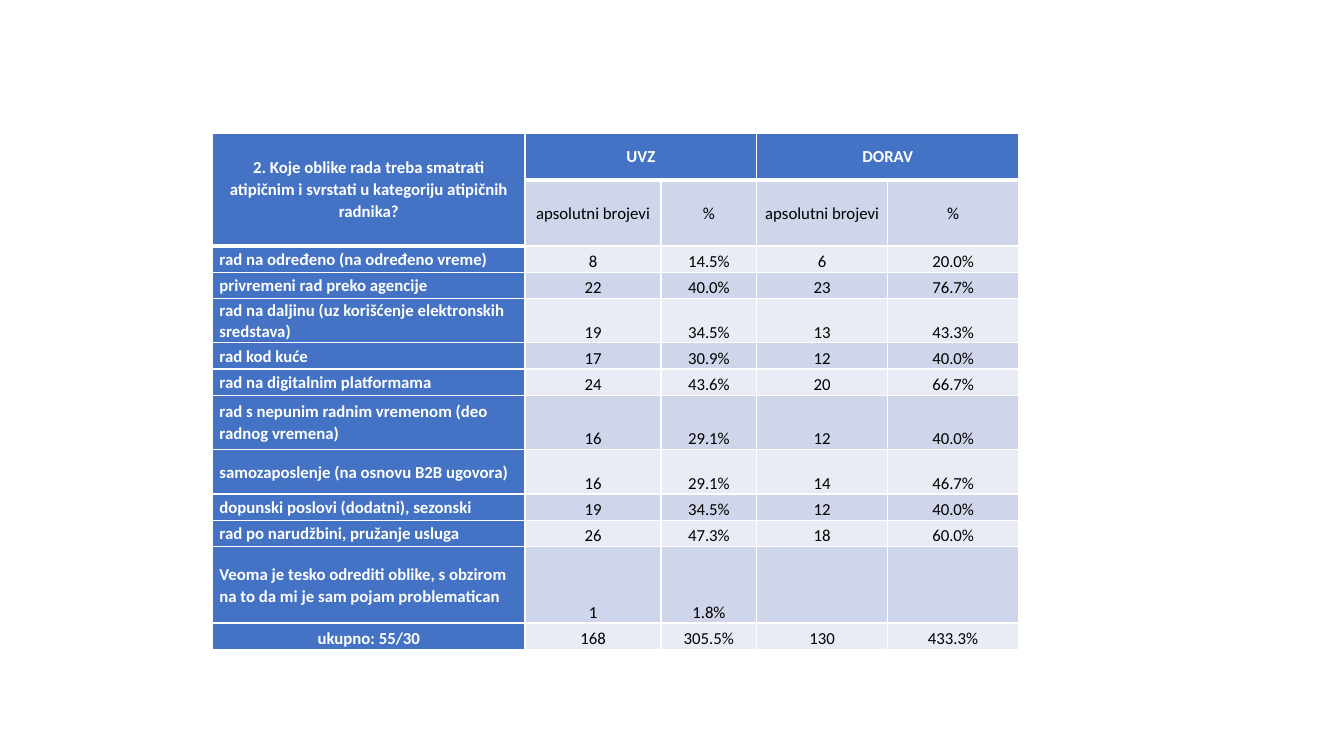
from lxml.etree import SubElement
from pptx import Presentation
from pptx.dml.color import RGBColor
from pptx.enum.text import MSO_ANCHOR, PP_ALIGN
from pptx.oxml.ns import qn
from pptx.util import Cm, Pt

WHITE = RGBColor(0xFF, 0xFF, 0xFF)
BLACK = RGBColor(0x00, 0x00, 0x00)
BLUE = RGBColor(0x44, 0x72, 0xC4)
BAND_DARK = RGBColor(0xCF, 0xD5, 0xEA)
BAND_LIGHT = RGBColor(0xE9, 0xEB, 0xF5)

QUESTION = ("2. Koje oblike rada treba smatrati atipičnim i svrstati "
            "u kategoriju atipičnih radnika?")
GROUPS = ["UVZ", "DORAV"]
MEASURES = ["apsolutni brojevi", "%"]
TOTAL_LABEL = "ukupno: 55/30"

COLUMN_WIDTHS = [7.87, 3.43, 2.41, 3.3, 3.3]
HEADER_HEIGHTS = [1.19, 0.97]

# Row height, form of work, then count and share for each group
ANSWERS = [
    (0.66, "rad na određeno (na određeno vreme)", "8", "14.5%", "6", "20.0%"),
    (0.66, "privremeni rad preko agencije", "22", "40.0%", "23", "76.7%"),
    (1.12, "rad na daljinu (uz korišćenje elektronskih sredstava)",
     "19", "34.5%", "13", "43.3%"),
    (0.66, "rad kod kuće", "17", "30.9%", "12", "40.0%"),
    (0.66, "rad na digitalnim platformama", "24", "43.6%", "20", "66.7%"),
    (1.37, "rad s nepunim radnim vremenom (deo radnog vremena)",
     "16", "29.1%", "12", "40.0%"),
    (1.12, "samozaposlenje (na osnovu B2B ugovora)", "16", "29.1%", "14", "46.7%"),
    (0.66, "dopunski poslovi (dodatni), sezonski", "19", "34.5%", "12", "40.0%"),
    (0.66, "rad po narudžbini, pružanje usluga", "26", "47.3%", "18", "60.0%"),
    (1.93, "Veoma je tesko odrediti oblike, s obzirom na to da mi je sam pojam "
           "problematican", "1", "1.8%", "", ""),
    (0.66, TOTAL_LABEL, "168", "305.5%", "130", "433.3%"),
]


def set_borders(cell, bottom=1):
    properties = cell._tc.get_or_add_tcPr()
    for side, width in (("L", 1), ("R", 1), ("T", 1), ("B", bottom)):
        line = SubElement(properties, qn(f"a:ln{side}"), w=str(Pt(width)))
        color = SubElement(SubElement(line, qn("a:solidFill")), qn("a:srgbClr"))
        color.set("val", str(WHITE))


def style_cell(cell, fill, bottom=1):
    set_borders(cell, bottom)
    cell.fill.solid()
    cell.fill.fore_color.rgb = fill


def write_text(cell, text, color=BLACK, bold=False,
               align=PP_ALIGN.CENTER, anchor=MSO_ANCHOR.MIDDLE):
    cell.margin_left = cell.margin_right = Cm(0.17)
    cell.margin_top = cell.margin_bottom = 0
    cell.vertical_anchor = anchor
    paragraph = cell.text_frame.paragraphs[0]
    paragraph.alignment = align
    paragraph.line_spacing = 1.07
    paragraph.font.size = Pt(12)
    if text:
        run = paragraph.add_run()
        run.text = text
        run.font.name = "Calibri"
        run.font.size = Pt(12)
        run.font.bold = bold
        run.font.color.rgb = color


def add_header(table):
    for column in range(len(COLUMN_WIDTHS)):
        style_cell(table.cell(0, column), BLUE, bottom=3)
    style_cell(table.cell(1, 0), BLUE, bottom=3)

    # Question spans both header rows
    table.cell(0, 0).merge(table.cell(1, 0))
    write_text(table.cell(0, 0), QUESTION, color=WHITE, bold=True)

    # Each group spans its two measures
    for index, group in enumerate(GROUPS):
        first = 1 + index * len(MEASURES)
        table.cell(0, first).merge(table.cell(0, first + 1))
        write_text(table.cell(0, first), group, color=WHITE, bold=True)
        for column, measure in enumerate(MEASURES, first):
            style_cell(table.cell(1, column), BAND_DARK)
            write_text(table.cell(1, column), measure)


def add_answer(table, row, label, values):
    is_total = label == TOTAL_LABEL
    label_cell = table.cell(row, 0)
    style_cell(label_cell, BLUE)
    write_text(label_cell, label, color=WHITE, bold=True,
               align=PP_ALIGN.CENTER if is_total else PP_ALIGN.LEFT,
               anchor=MSO_ANCHOR.BOTTOM if is_total else MSO_ANCHOR.MIDDLE)
    for column, value in enumerate(values, 1):
        cell = table.cell(row, column)
        style_cell(cell, BAND_DARK if row % 2 else BAND_LIGHT)
        write_text(cell, value, anchor=MSO_ANCHOR.BOTTOM)


def add_survey_table(slide):
    heights = HEADER_HEIGHTS + [answer[0] for answer in ANSWERS]
    table = slide.shapes.add_table(
        len(heights), len(COLUMN_WIDTHS), Cm(5.36), Cm(3.35),
        Cm(sum(COLUMN_WIDTHS)), Cm(sum(heights))).table
    for column, width in zip(table.columns, COLUMN_WIDTHS):
        column.width = Cm(width)
    for row, height in zip(table.rows, heights):
        row.height = Cm(height)

    add_header(table)
    for row, (_, label, *values) in enumerate(ANSWERS, len(HEADER_HEIGHTS)):
        add_answer(table, row, label, values)


def main():
    presentation = Presentation()
    presentation.slide_width = Cm(33.87)
    presentation.slide_height = Cm(19.05)
    slide = presentation.slides.add_slide(presentation.slide_layouts[6])
    add_survey_table(slide)
    presentation.save("out.pptx")


if __name__ == "__main__":
    main()
